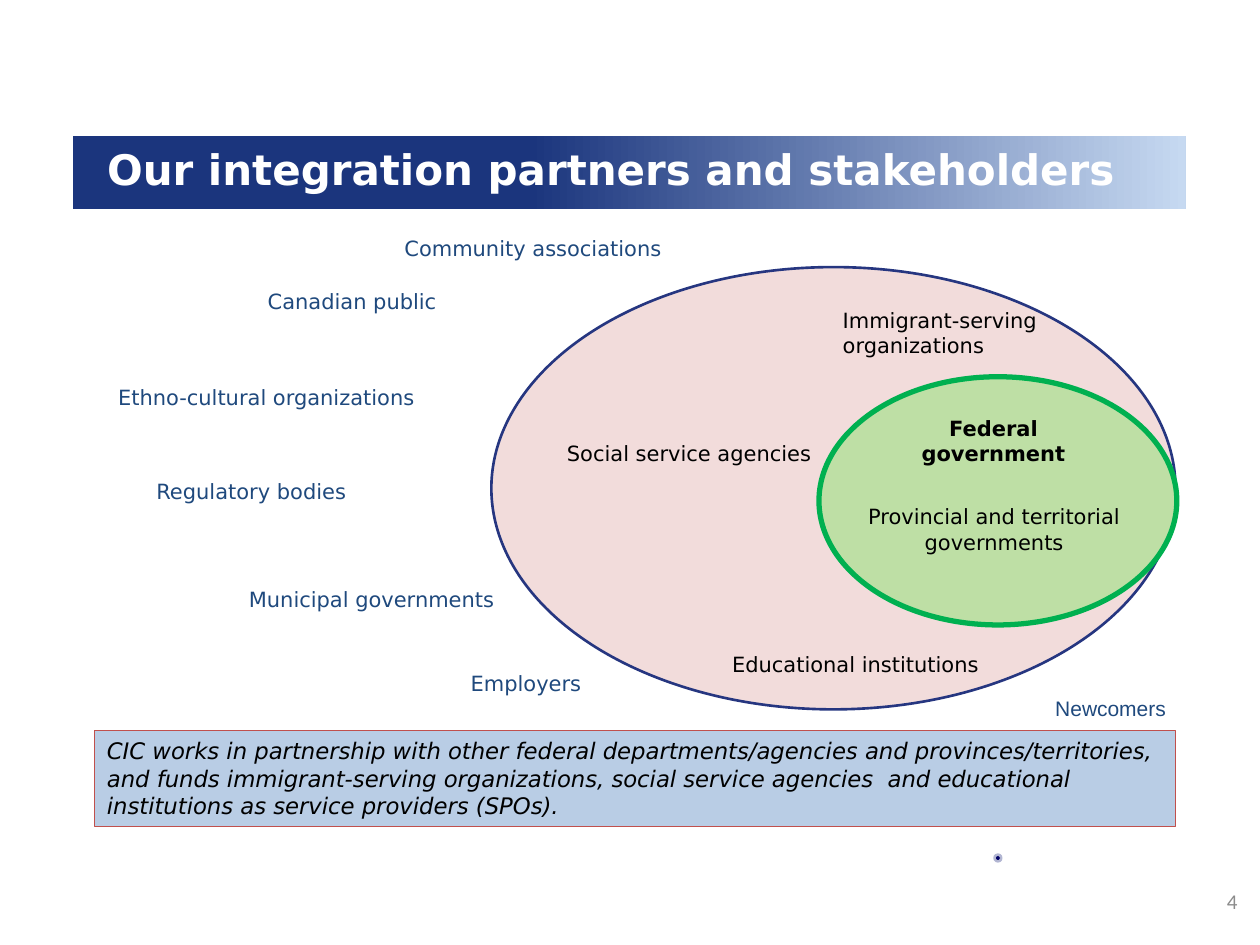
"""Build the slide on integration partners and stakeholders."""
from typing import NamedTuple, Optional

from pptx import Presentation
from pptx.dml.color import RGBColor
from pptx.enum.shapes import MSO_SHAPE
from pptx.enum.text import MSO_ANCHOR, MSO_AUTO_SIZE, PP_ALIGN
from pptx.util import Emu, Pt

SCALE = 9144
FONT = "DejaVu Sans"
BLACK, NAVY = "000000", "1F497D"


class Box(NamedTuple):
    left: int
    top: int
    width: int
    height: int


class Label(NamedTuple):
    text: str
    box: Box
    color: str = NAVY
    bold: bool = False
    font: str = FONT
    align: PP_ALIGN = PP_ALIGN.CENTER


class Oval(NamedTuple):
    box: Box
    fill: Optional[str]
    line: str
    weight: float


RINGS = [
    Oval(Box(390, 212, 543, 351), "F2DCDB", "263680", 1.5),
    Oval(Box(650, 299, 284, 197), "BEDFA5", "00B050", 3),
]
DOTS = [
    Oval(Box(789, 678, 6, 6), None, "B2B6D2", 1),
    Oval(Box(790, 679, 4, 4), "000066", "B2B6D2", 0.5),
]
LABELS = [
    Label("Federal government", Box(710, 325, 157, 50), BLACK, bold=True),
    Label("Provincial and territorial\ngovernments", Box(659, 395, 260, 50), BLACK),
    Label("Immigrant-serving organizations", Box(659, 239, 197, 51), BLACK,
          align=PP_ALIGN.LEFT),
    Label("Social service agencies", Box(435, 345, 224, 30), BLACK),
    Label("Educational institutions", Box(563, 512, 232, 30), BLACK),
    Label("Community associations", Box(232, 182, 382, 30)),
    Label("Canadian public", Box(193, 224, 173, 30)),
    Label("Ethno-cultural organizations", Box(0, 300, 423, 30)),
    Label("Regulatory bodies", Box(33, 375, 333, 30)),
    Label("Municipal governments", Box(86, 461, 418, 30)),
    Label("Employers", Box(331, 527, 173, 30)),
    Label("Newcomers", Box(795, 547, 173, 30), font="Arial"),
]
NOTE = ("CIC works in partnership with other federal departments/agencies and "
        "provinces/territories, and funds immigrant-serving organizations, social "
        "service agencies  and educational institutions as service providers (SPOs).")


def px(num: int) -> Emu:
    return Emu(num * SCALE)


def emus(box: Box) -> list[Emu]:
    return [px(num) for num in box]


def rgb(code: str) -> RGBColor:
    return RGBColor.from_string(code)


def write(shape, text: str, *, size: float = 12, color: str = BLACK,
          font: str = FONT, bold: bool = False, italic: bool = False,
          align: PP_ALIGN = PP_ALIGN.LEFT, anchor: MSO_ANCHOR = MSO_ANCHOR.TOP,
          grow: bool = False) -> None:
    frame = shape.text_frame
    frame.word_wrap = True
    frame.auto_size = MSO_AUTO_SIZE.SHAPE_TO_FIT_TEXT if grow else MSO_AUTO_SIZE.NONE
    frame.vertical_anchor = anchor
    frame.text = text
    for para in frame.paragraphs:
        para.alignment = align
        for run in para.runs:
            face = run.font
            face.name, face.size = font, Pt(size)
            face.bold, face.italic = bold, italic
            face.color.rgb = rgb(color)


def draw(shapes, kind: MSO_SHAPE, box: Box, fill: Optional[str] = None,
         line: Optional[str] = None, weight: float = 1):
    shape = shapes.add_shape(kind, *emus(box))
    shape.shadow.inherit = False
    if fill:
        shape.fill.solid()
        shape.fill.fore_color.rgb = rgb(fill)
    else:
        shape.fill.background()
    if line:
        shape.line.color.rgb = rgb(line)
        shape.line.width = Pt(weight)
    else:
        shape.line.fill.background()
    return shape


def head(slide) -> None:
    band = draw(slide.shapes, MSO_SHAPE.RECTANGLE, Box(58, 108, 883, 58))
    band.fill.gradient()
    band.fill.gradient_angle = 0
    stops = [(0.41, "1B357D"), (1, "C6D9F1")]
    for stop, (place, color) in zip(band.fill.gradient_stops, stops):
        stop.position = place
        stop.color.rgb = rgb(color)
    title = slide.shapes.title
    title.left, title.top, title.width, title.height = emus(Box(75, 100, 875, 67))
    title.element.addprevious(band.element)
    write(title, "Our integration partners and stakeholders", size=24,
          color="FFFFFF", bold=True, anchor=MSO_ANCHOR.MIDDLE)


def main() -> None:
    deck = Presentation()
    deck.slide_width, deck.slide_height = px(1000), px(750)
    slide = deck.slides.add_slide(deck.slide_layouts[5])
    shapes = slide.shapes
    head(slide)
    for ring in RINGS:
        draw(shapes, MSO_SHAPE.OVAL, *ring)
    group = shapes.add_group_shape()
    for dot in DOTS:
        draw(group.shapes, MSO_SHAPE.OVAL, *dot)
    for item in LABELS:
        write(shapes.add_textbox(*emus(item.box)), item.text, color=item.color,
              bold=item.bold, font=item.font, align=item.align, grow=True)
    page = shapes.add_textbox(*emus(Box(900, 695, 92, 40)))
    write(page, "4", color="8C8C8C", font="Calibri", align=PP_ALIGN.RIGHT,
          anchor=MSO_ANCHOR.MIDDLE)
    note = draw(shapes, MSO_SHAPE.RECTANGLE, Box(75, 580, 858, 76),
                "B9CDE5", "C0504D", 0.75)
    write(note, NOTE, size=13, italic=True, grow=True)
    deck.save("out.pptx")


if __name__ == "__main__":
    main()
